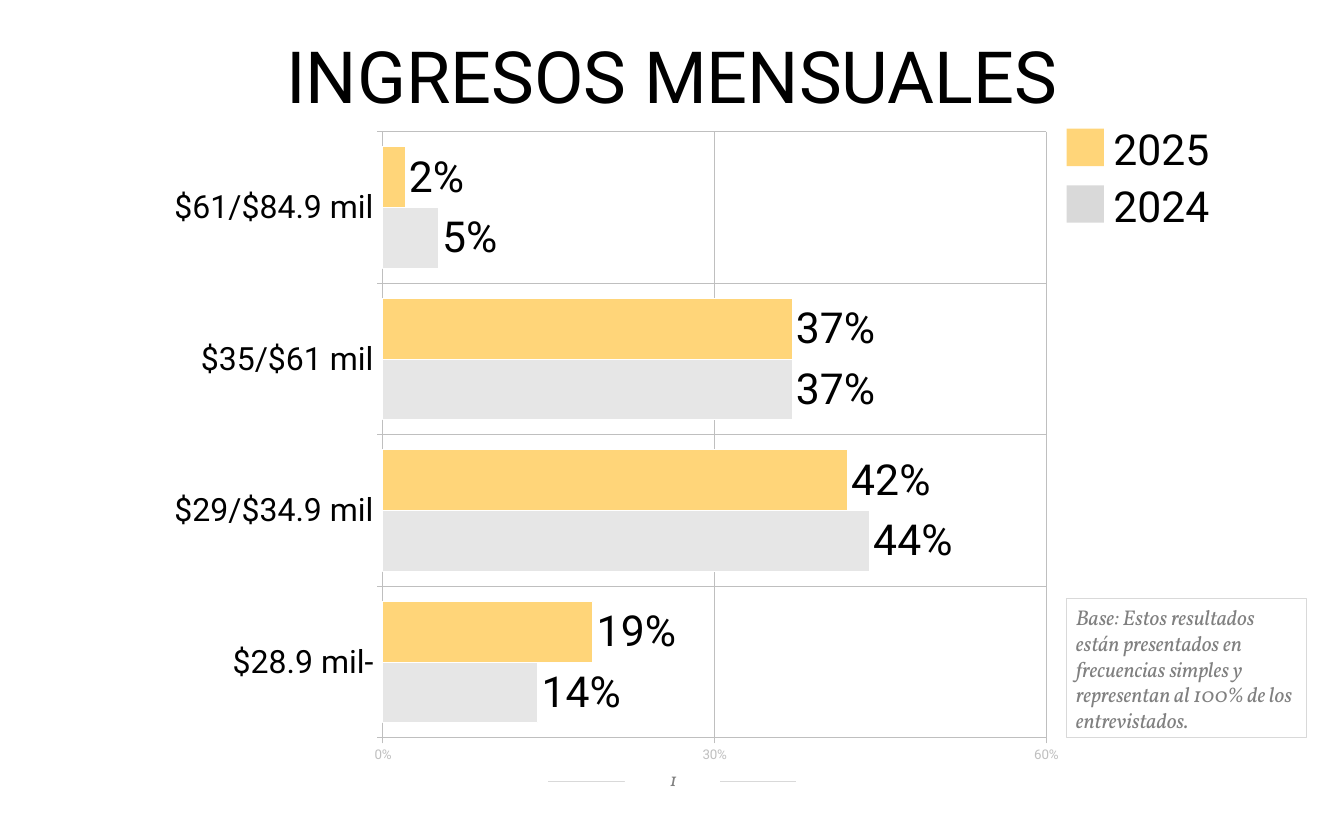
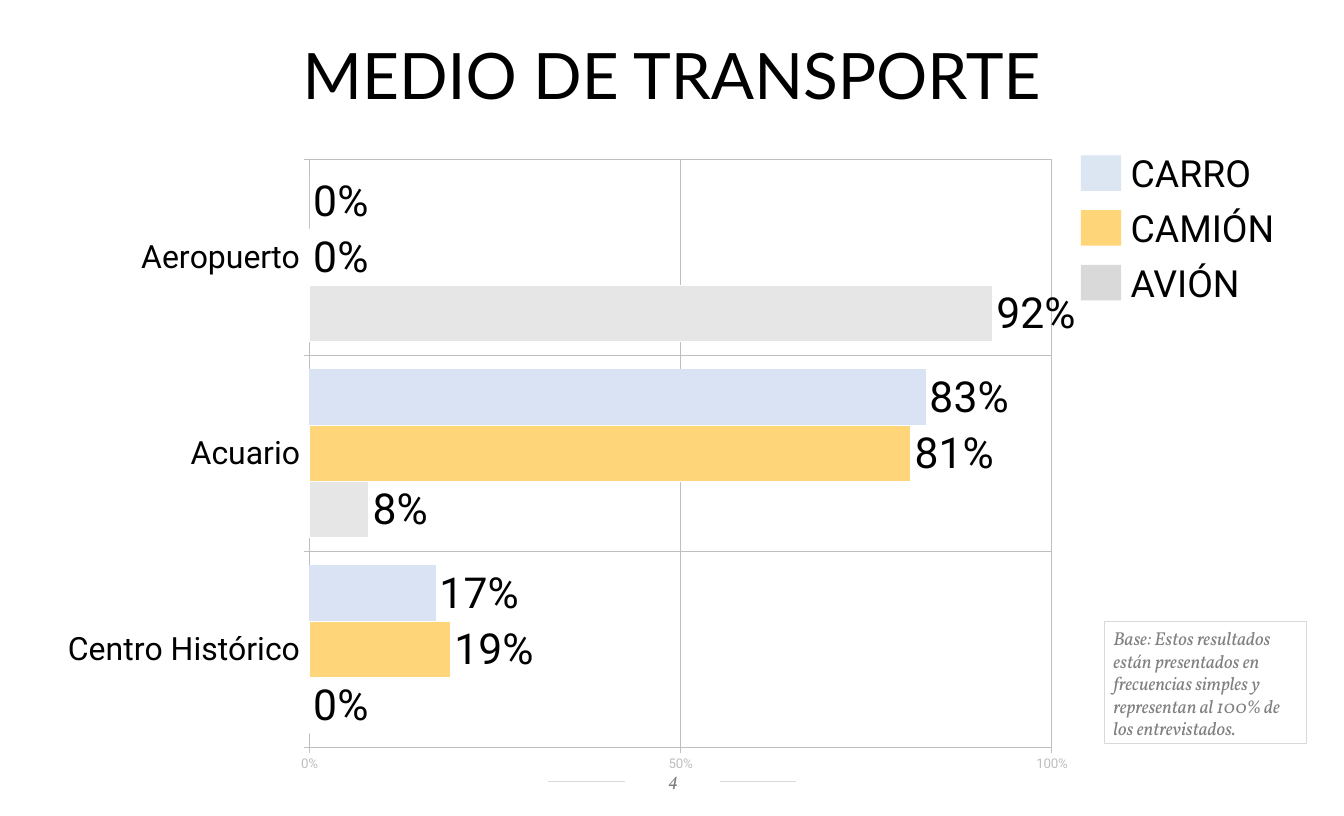
from lxml import etree
from pptx import Presentation
from pptx.chart.data import CategoryChartData
from pptx.dml.color import RGBColor
from pptx.enum import chart as charts, shapes, text
from pptx.oxml import parse_xml
from pptx.oxml.ns import nsdecls, qn
from pptx.util import Inches, Pt

COLORS = {
    "text": "000000", "muted": "808080", "rule": "D9D9D9", "grid": "BFBFBF",
    "white": "FFFFFF", "yellow": "FFD579", "gray_bar": "E6E6E6",
    "blue_bar": "DAE3F3", "blue_key": "DCE6F2",
}
PLOT_AREA = {"x": 0.288, "y": 0.027, "w": 0.691, "h": 0.934}
BASE_NOTE = ("Base: Estos resultados están presentados en frecuencias simples "
             "y representan al 100% de los entrevistados.")


def rgb(name):
    """Return the named colour."""
    return RGBColor.from_string(COLORS[name])


def style_font(font, size, color="text", face="Roboto", italic=False):
    """Format a font."""
    font.name, font.size, font.italic = face, Pt(size), italic
    font.color.rgb = rgb(color)


def style_line(line, color, width=0.75):
    """Format an outline."""
    line.color.rgb = rgb(color)
    line.width = Pt(width)


def write(shape, words, size, align=text.PP_ALIGN.LEFT, **font):
    """Put one wrapped paragraph in a shape and return the paragraph."""
    frame = shape.text_frame
    frame.text = words
    frame.word_wrap = True
    paragraph = frame.paragraphs[0]
    paragraph.alignment = align
    style_font(paragraph.runs[0].font, size, **font)
    return paragraph


def set_margins(frame, left, top, right, bottom):
    """Set the four text margins in inches."""
    frame.margin_left, frame.margin_top = Inches(left), Inches(top)
    frame.margin_right, frame.margin_bottom = Inches(right), Inches(bottom)


def add_label(slide, box, words, size, **font):
    """Add a text box and return it."""
    label = slide.shapes.add_textbox(*map(Inches, box))
    write(label, words, size, **font)
    return label


def add_box(slide, box, fill=None, outline=None):
    """Add a flat rectangle."""
    rect = slide.shapes.add_shape(shapes.MSO_SHAPE.RECTANGLE, *map(Inches, box))
    rect.shadow.inherit = False
    if fill:
        rect.fill.solid()
        rect.fill.fore_color.rgb = rgb(fill)
    else:
        rect.fill.background()
    if outline:
        style_line(rect.line, outline)
    else:
        rect.line.fill.background()
    return rect


def add_footer(slide, number):
    """Add the page number between two short rules."""
    rule = slide.shapes.add_connector(
        shapes.MSO_CONNECTOR.STRAIGHT,
        Inches(5.71), Inches(8.14), Inches(8.29), Inches(8.14))
    style_line(rule.line, "rule", 0.5)
    etree.SubElement(rule._element.spPr, qn("a:effectLst"))
    page = add_box(slide, (6.51, 7.98, 0.99, 0.29), fill="white")
    write(page, number, 14, text.PP_ALIGN.CENTER,
          color="muted", face="Vollkorn", italic=True)
    page.text_frame.vertical_anchor = text.MSO_ANCHOR.MIDDLE
    set_margins(page.text_frame, 0.12, 0.02, 0.1, 0.05)


def add_title(slide, words, top, height, size, face):
    """Add the centred title across the slide."""
    title = add_label(slide, (0, top, 14, height), words, size,
                      face=face, align=text.PP_ALIGN.CENTER)
    set_margins(title.text_frame, 0.14, 0.07, 0.14, 0.07)
    title.text_frame.paragraphs[0].line_spacing = 0.8


def add_base_note(slide, box, size):
    """Add the framed note on the sample."""
    note = add_box(slide, box, outline="rule")
    write(note, BASE_NOTE, size, color="muted", face="Vollkorn", italic=True)
    note.text_frame.vertical_anchor = text.MSO_ANCHOR.BOTTOM


def add_legend(slide, entries, key, label, pitch, size):
    """Stack colour keys and their labels, given the first key and label boxes."""
    for row, (words, color) in enumerate(entries):
        for_row = [(x, y + row * pitch, w, h) for x, y, w, h in (key, label)]
        add_label(slide, for_row[1], words, size)
        add_box(slide, for_row[0], fill=color)


def style_axis(axis):
    """Give an axis its line, gridlines and outer ticks."""
    style_line(axis.format.line, "grid")
    axis.has_major_gridlines = True
    style_line(axis.major_gridlines.format.line, "grid")
    axis.major_tick_mark = charts.XL_TICK_MARK.OUTSIDE
    axis.minor_tick_mark = charts.XL_TICK_MARK.NONE


def fix_plot_area(chart):
    """Place the inner plot area by fractions of the chart."""
    plot_area = chart.element.find(".//" + qn("c:plotArea"))
    for layout in plot_area.findall(qn("c:layout")):
        plot_area.remove(layout)
    modes = "".join(f'<c:{side}Mode val="edge"/>' for side in "xy")
    places = "".join(f'<c:{side} val="{part}"/>' for side, part in PLOT_AREA.items())
    plot_area.insert(0, parse_xml(
        f'<c:layout {nsdecls("c")}><c:manualLayout><c:layoutTarget val="inner"/>'
        f'{modes}{places}</c:manualLayout></c:layout>'))


def style_series(series, color, outlined):
    """Colour one series and label its bars."""
    series.format.fill.solid()
    series.format.fill.fore_color.rgb = rgb(color)
    series.invert_if_negative = False
    if outlined:
        style_line(series.format.line, "white")
    else:
        series.format.line.fill.background()
    labels = series.data_labels
    labels.show_value = True
    labels.number_format, labels.number_format_is_linked = "0%", False
    labels.position = charts.XL_LABEL_POSITION.OUTSIDE_END
    style_font(labels.font, 32)


def add_bars(slide, box, categories, bars, maximum):
    """Add a clustered bar chart; bars holds (colour, values) from the bottom up."""
    data = CategoryChartData(number_format="0%")
    data.categories = categories
    for index, (_, values) in enumerate(bars, 1):
        data.add_series(f"Series {index}", values)
    chart = slide.shapes.add_chart(
        charts.XL_CHART_TYPE.BAR_CLUSTERED, *map(Inches, box), data).chart
    chart.has_legend = chart.has_title = False
    style_font(chart.font, 10)
    fix_plot_area(chart)

    style_axis(chart.category_axis)
    style_font(chart.category_axis.tick_labels.font, 24)
    scale = chart.value_axis
    style_axis(scale)
    style_font(scale.tick_labels.font, 10, "grid")
    scale.minimum_scale, scale.maximum_scale = 0, maximum
    scale.major_unit = maximum / 2
    scale.tick_label_position = charts.XL_TICK_LABEL_POSITION.LOW
    scale.tick_labels.number_format = "0%"
    scale.tick_labels.number_format_is_linked = False

    plot = chart.plots[0]
    plot.gap_width, plot.overlap, plot.vary_by_categories = 50, 0, False
    for series, (color, _) in zip(plot.series, bars):
        style_series(series, color, outlined=color != "blue_bar")


def build_income(slide):
    """Build the monthly income slide."""
    add_footer(slide, "1")
    add_title(slide, "INGRESOS MENSUALES", 0.43, 0.87, 54, "Roboto")
    add_base_note(slide, (11.11, 6.23, 2.5, 1.45), 16)
    add_bars(slide, (1.11, 1.19, 10, 6.76),
             ["$28.9 mil-", "$29/$34.9 mil", "$35/$61 mil", "$61/$84.9 mil"],
             [("gray_bar", [0.14, 0.44, 0.37, 0.05]),
              ("yellow", [0.19, 0.42, 0.37, 0.02])], 0.6)
    add_legend(slide, [("2025", "yellow"), ("2024", "rule")],
               (11.11, 1.34, 0.39, 0.39), (11.5, 1.23, 2.11, 0.64), 0.59, 32)


def build_transport(slide):
    """Build the means of transport slide."""
    add_footer(slide, "4")
    add_title(slide, "MEDIO DE TRANSPORTE", 0.45, 0.78, 48, "Lato")
    add_base_note(slide, (11.5, 6.47, 2.11, 1.28), 14)
    add_bars(slide, (0, 1.48, 11.21, 6.56),
             ["Centro Histórico", "Acuario", "Aeropuerto"],
             [("gray_bar", [0, 0.08, 0.92]),
              ("yellow", [0.19, 0.81, 0]),
              ("blue_bar", [0.17, 0.83, 0])], 1)
    add_legend(slide, [("CARRO", "blue_key"), ("CAMIÓN", "yellow"), ("AVIÓN", "rule")],
               (11.26, 1.62, 0.42, 0.37), (11.68, 1.52, 2.32, 0.57), 0.57, 28)


def main():
    """Build and save the presentation."""
    deck = Presentation()
    deck.slide_width, deck.slide_height = Inches(14), Inches(8.5)
    for build in (build_income, build_transport):
        build(deck.slides.add_slide(deck.slide_layouts[6]))
    deck.save("out.pptx")


if __name__ == "__main__":
    main()
